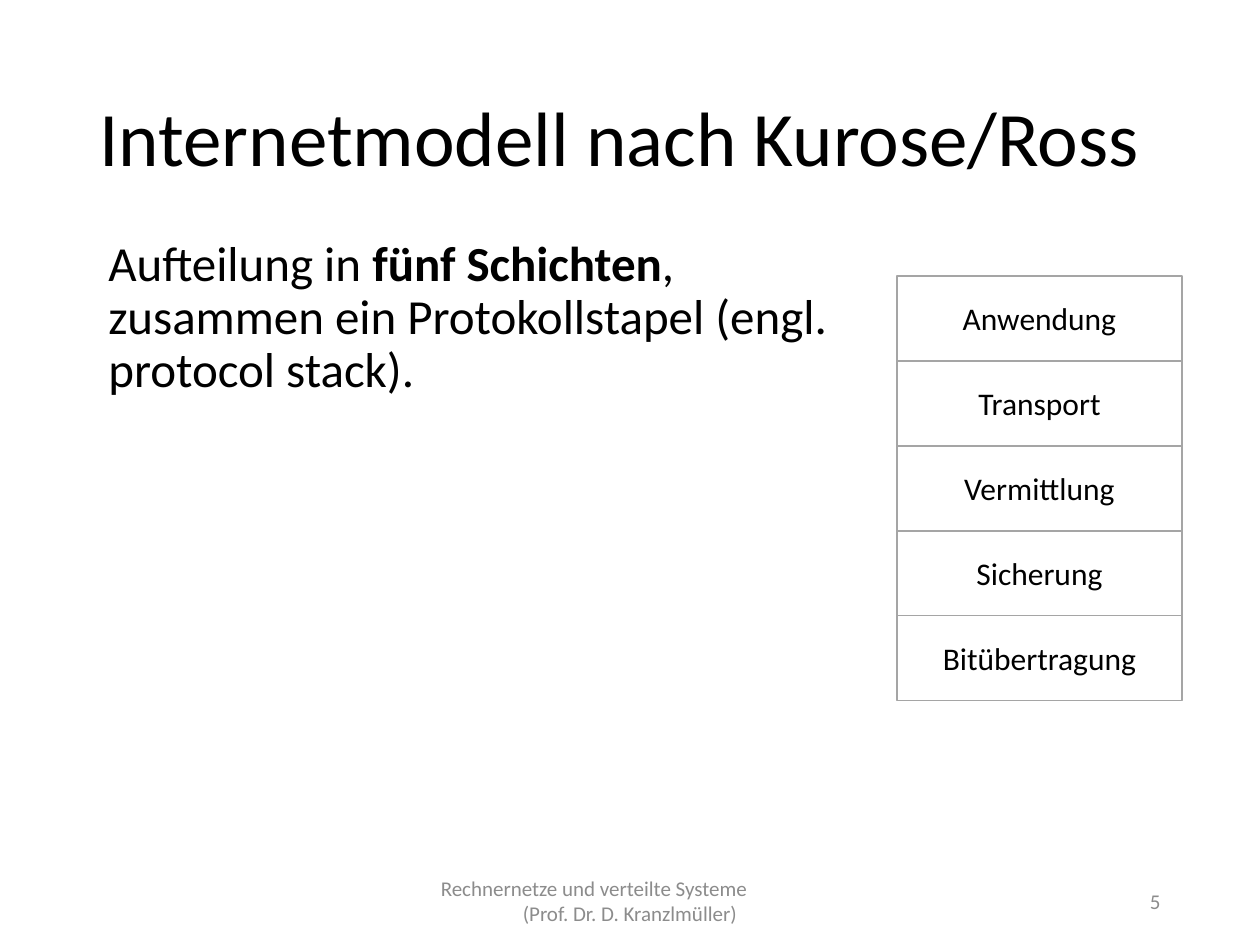
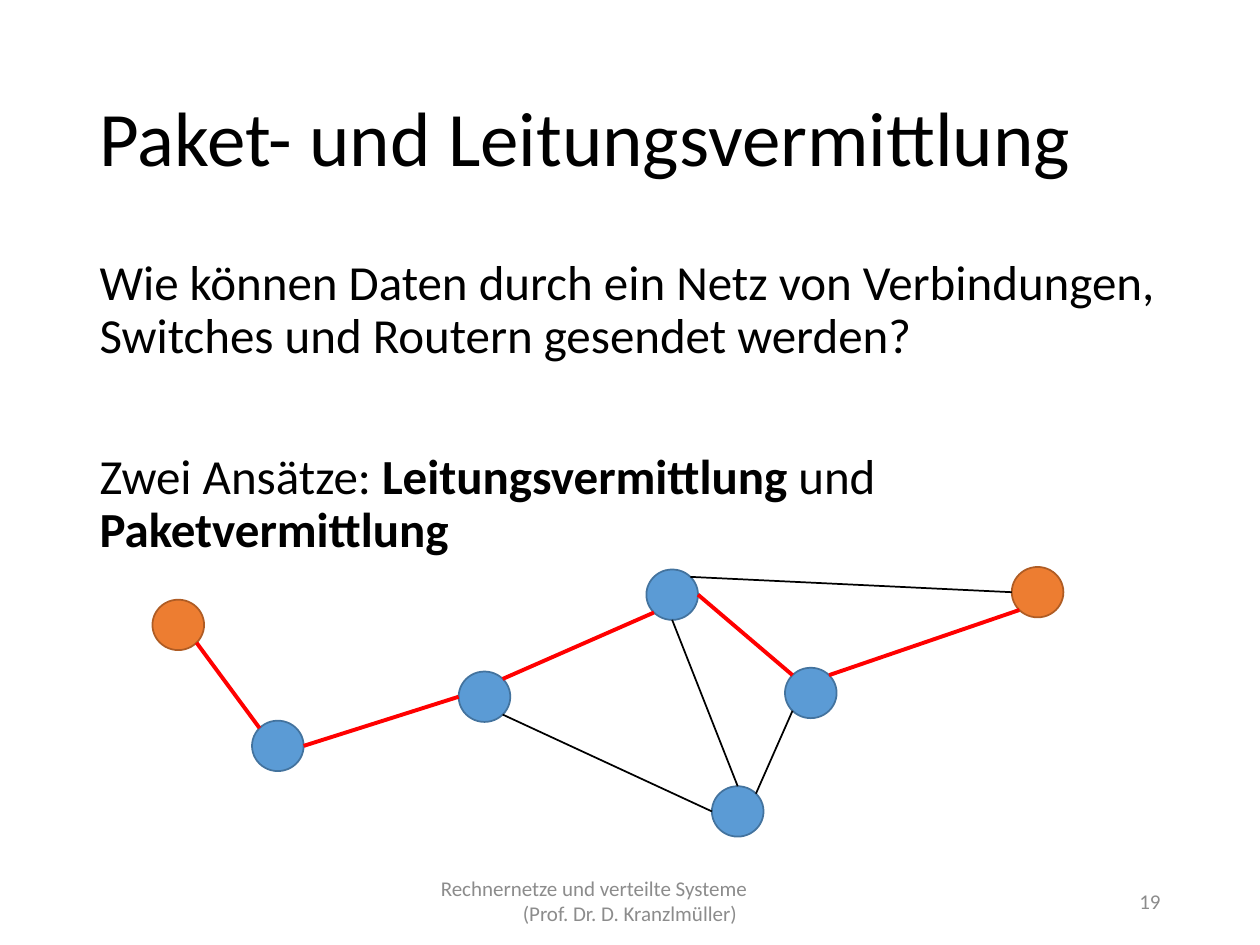
from dataclasses import dataclass
from math import cos, radians, sin

from pptx import Presentation
from pptx.dml.color import RGBColor
from pptx.enum.shapes import MSO_CONNECTOR, MSO_SHAPE
from pptx.enum.text import MSO_ANCHOR, MSO_AUTO_SIZE, PP_ALIGN
from pptx.oxml.ns import qn
from pptx.util import Inches, Pt


@dataclass(frozen=True)
class Theme:
    font: str = "Calibri"
    text: str = "000000"
    muted: str = "8C8C8C"
    paper: str = "FFFFFF"
    border: str = "A5A5A5"
    host: tuple = ("ED7D31", "AF5C24")
    router: tuple = ("5B9BD5", "43739E")
    route: str = "FF0000"
    title_size: float = 44
    body_size: float = 28
    layer_size: float = 18
    footer_size: float = 12
    thin: float = 1
    thick: float = 2.25


T = Theme()
COLS, ROWS = 100, 75  # slide grid
WIDTH, HEIGHT = Inches(10), Inches(7.5)
MARGIN, CONTENT = 6.9, 86.2
NODE_W, NODE_H = 4.1, 4

LAYERS = ["Anwendung", "Transport", "Vermittlung", "Sicherung", "Bitübertragung"]

# Network nodes: left column, top row, colours
NODES = {
    "sender": (12.1, 47.6, T.host),
    "west": (20, 57.2, T.router),
    "middle": (36.4, 53.3, T.router),
    "north": (51.3, 45.2, T.router),
    "south": (56.5, 62.4, T.router),
    "east": (62.3, 53, T.router),
    "receiver": (80.3, 45, T.host),
}
# Compass directions on a node, in degrees
E, NE, N, NW, W, SW, S, SE = range(0, 360, 45)
SIDE_LINKS = [
    ("middle", SE, "south", W),
    ("east", SW, "south", NE),
    ("north", S, "south", N),
    ("north", NE, "receiver", W),
]
ROUTE_LINKS = [
    ("sender", SE, "west", NW),
    ("middle", W, "west", E),
    ("north", SW, "middle", NE),
    ("north", E, "east", NW),
    ("receiver", SW, "east", NE),
]


def grid(col, row):
    return int(WIDTH * col / COLS), int(HEIGHT * row / ROWS)


def area(col, row, width, height):
    return *grid(col, row), *grid(width, height)


def rgb(value):
    return RGBColor.from_string(value)


def write(tf, paragraphs, size, color=T.text, align=PP_ALIGN.LEFT,
          anchor=MSO_ANCHOR.MIDDLE, spacing=1.0, gap=0, indents=()):
    """Write paragraphs, each a list of (text, bold) runs; None breaks a line."""
    tf.word_wrap = True
    tf.auto_size = MSO_AUTO_SIZE.NONE
    tf.vertical_anchor = anchor
    for i, runs in enumerate(paragraphs):
        p = tf.paragraphs[0] if i == 0 else tf.add_paragraph()
        pPr = p._p.get_or_add_pPr()
        pPr.set("marL", str(Inches(indents[i] if indents else 0)))
        pPr.set("indent", "0")
        p.alignment = align[i] if isinstance(align, list) else align
        p.line_spacing = spacing
        p.space_before = Pt(gap if i else 0)
        pPr.append(pPr.makeelement(qn("a:buNone"), {}))
        for run in runs:
            if run is None:
                p.add_line_break()
                continue
            r = p.add_run()
            r.text, r.font.bold = run
            r.font.name = T.font
            r.font.size = Pt(size)
            r.font.color.rgb = rgb(color)


def place(sp, col, row, width, height):
    sp.left, sp.top, sp.width, sp.height = area(col, row, width, height)
    return sp.text_frame


def add_shape(s, kind, box, fill, line):
    sp = s.shapes.add_shape(kind, *area(*box))
    sp.shadow.inherit = False
    sp.fill.solid()
    sp.fill.fore_color.rgb = rgb(fill)
    sp.line.color.rgb = rgb(line)
    sp.line.width = Pt(T.thin)
    return sp


def add_slide(prs, title, number, body, body_box, gap=0):
    s = prs.slides.add_slide(prs.slide_layouts[1])
    write(place(s.shapes.title, MARGIN, 4, CONTENT, 14.5),
          [[(title, False)]], T.title_size, spacing=0.9)
    write(place(s.placeholders[1], *body_box), body, T.body_size,
          anchor=MSO_ANCHOR.TOP, spacing=0.9, gap=gap)
    # Footer and slide number
    footer = s.shapes.add_textbox(*area(33.1, 69.5, 33.8, 4))
    write(footer.text_frame,
          [[("Rechnernetze und verteilte Systeme", False)],
           [("(Prof. Dr. D. Kranzlmüller)", False)]],
          T.footer_size, T.muted, [PP_ALIGN.LEFT, PP_ALIGN.CENTER],
          indents=(0.09, 0))
    page = s.shapes.add_textbox(*area(70.6, 69.5, 22.5, 4))
    write(page.text_frame, [[(str(number), False)]], T.footer_size, T.muted,
          PP_ALIGN.RIGHT)
    return s


def add_layer_stack(s, left, top, width, height):
    for i, layer in enumerate(LAYERS):
        sp = add_shape(s, MSO_SHAPE.RECTANGLE,
                       (left, top + i * height, width, height), T.paper, T.border)
        write(sp.text_frame, [[(layer, False)]], T.layer_size,
              align=PP_ALIGN.CENTER)


def rim(node, direction):
    """Point on a node's outline in a compass direction."""
    left, top, _ = NODES[node]
    a = radians(direction)
    # Rows grow downwards, and so do the angles E, SE, S when negated
    return grid(left + NODE_W / 2 * (1 + cos(a)),
                top + NODE_H / 2 * (1 - sin(a)))


def add_link(s, start, start_side, end, end_side, color, width):
    c = s.shapes.add_connector(MSO_CONNECTOR.STRAIGHT,
                               *rim(start, start_side), *rim(end, end_side))
    c.line.color.rgb = rgb(color)
    c.line.width = Pt(width)
    spPr = c._element.spPr
    spPr.append(spPr.makeelement(qn("a:effectLst"), {}))


def add_network(s):
    for left, top, colors in NODES.values():
        add_shape(s, MSO_SHAPE.OVAL, (left, top, NODE_W, NODE_H), *colors)
    for link in SIDE_LINKS:
        add_link(s, *link, T.text, T.thin)
    for link in ROUTE_LINKS:
        add_link(s, *link, T.route, T.thick)


def main():
    prs = Presentation()
    prs.slide_width, prs.slide_height = WIDTH, HEIGHT

    # Layer model
    s = add_slide(prs, "Internetmodell nach Kurose/Ross", 5,
                  [[("Aufteilung in ", False), ("fünf Schichten", True),
                    (",", False), None,
                    ("zusammen ein Protokollstapel (engl. protocol stack).", False)]],
                  (7.6, 18.5, 62.5, 47.6))
    add_layer_stack(s, 71.2, 21.9, 22.6, 6.74)

    # Switching
    s = add_slide(prs, "Paket- und Leitungsvermittlung", 19,
                  [[("Wie können Daten durch ein Netz von Verbindungen, "
                     "Switches und Routern gesendet werden?", False)],
                   [("Zwei Ansätze: ", False), ("Leitungsvermittlung", True),
                    (" und ", False), ("Paketvermittlung", True)]],
                  (MARGIN, 20, CONTENT, 47.6), gap=50.5)
    add_network(s)

    prs.save("out.pptx")


if __name__ == "__main__":
    main()
